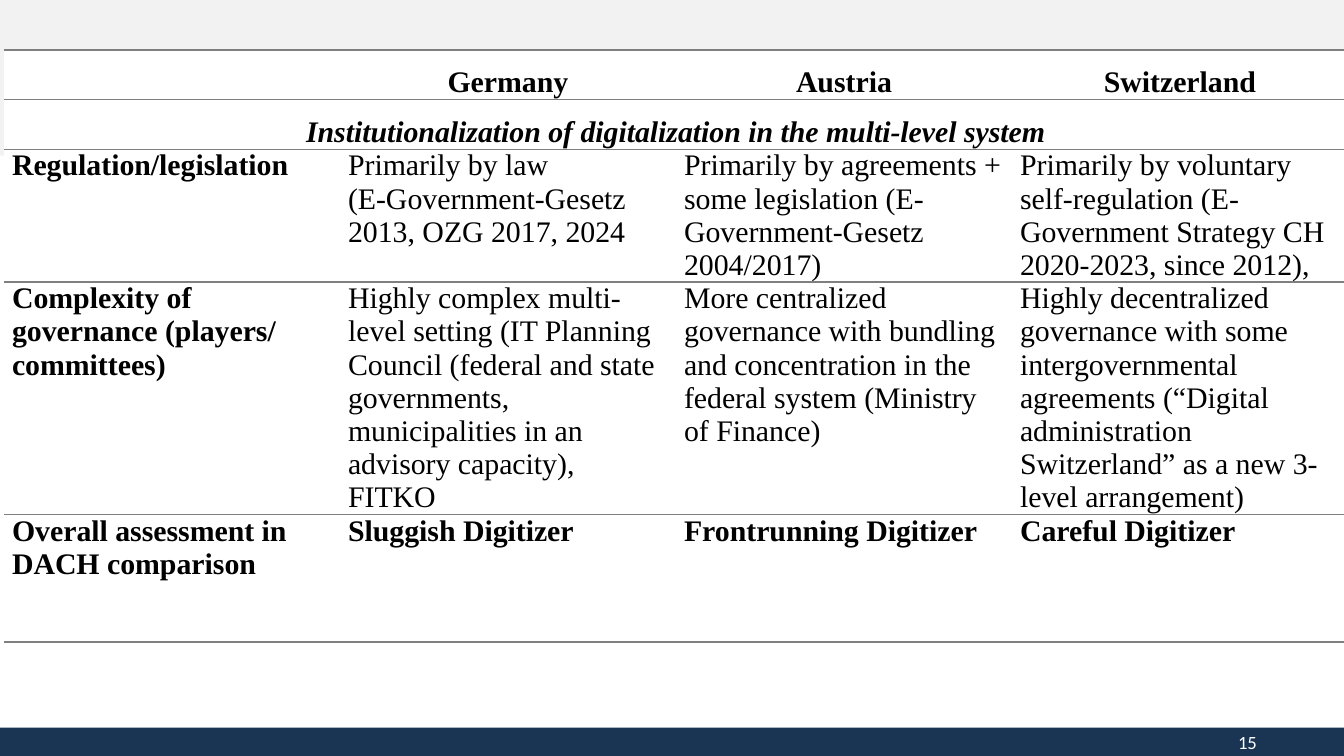
from lxml.etree import SubElement
from pptx import Presentation
from pptx.dml.color import RGBColor
from pptx.enum.shapes import MSO_SHAPE
from pptx.enum.text import MSO_ANCHOR, PP_ALIGN
from pptx.oxml import parse_xml
from pptx.oxml.ns import nsdecls, qn
from pptx.util import Inches, Pt

COLORS = {"band": "F2F2F2", "footer": "193553", "rule": "7F7F7F",
          "text": "000000", "white": "FFFFFF"}
ROWS = [
    ["", "Germany", "Austria", "Switzerland"],
    ["Institutionalization of digitalization in the multi-level system"],
    ["Regulation/legislation",
     "Primarily by law\n(E-Government-Gesetz 2013, OZG 2017, 2024",
     "Primarily by agreements + some legislation (E-Government-Gesetz 2004/2017)",
     "Primarily by voluntary self-regulation (E-Government Strategy CH 2020-2023, since 2012),"],
    ["Complexity of governance (players/ committees)",
     "Highly complex multi-level setting (IT Planning Council (federal and state governments, "
     "municipalities in an advisory capacity), FITKO",
     "More centralized governance with bundling and concentration in the federal system "
     "(Ministry of Finance)",
     "Highly decentralized governance with some intergovernmental agreements (“Digital "
     "administration Switzerland” as a new 3-level arrangement)"],
    ["Overall assessment in DACH comparison", "Sluggish Digitizer",
     "Frontrunning Digitizer", "Careful Digitizer"],
]
ROW_HEIGHTS = [0.29, 0.29, 0.95, 1.28, 0.95]


def add_run(paragraph, text, font_name, size, color):
    run = paragraph.add_run()
    run.text = text
    run.font.name = font_name
    run.font.size = Pt(size)
    run.font.color.rgb = RGBColor.from_string(COLORS[color])
    return run


def set_borders(cell):
    properties = cell._tc.get_or_add_tcPr()
    for index, side in enumerate(["lnL", "lnR", "lnT", "lnB"]):
        line = parse_xml(f'<a:{side} {nsdecls("a")} w="12700"/>')
        if side in ("lnT", "lnB"):
            fill = SubElement(line, qn("a:solidFill"))
            SubElement(fill, qn("a:srgbClr")).set("val", COLORS["rule"])
        else:
            SubElement(line, qn("a:noFill"))
        properties.insert(index, line)


presentation = Presentation()
presentation.slide_width = Inches(10)
presentation.slide_height = Inches(5.625)
width, height = presentation.slide_width, presentation.slide_height
slide = presentation.slides.add_slide(presentation.slide_layouts[6])

footer_top = int(height * 0.9625)
footer_height = height - footer_top
for top, band_height, color in [(0, int(height * 0.206), "band"),
                                (footer_top, footer_height, "footer")]:
    shape = slide.shapes.add_shape(MSO_SHAPE.RECTANGLE, 0, top, width, band_height)
    shape.shadow.inherit = False
    shape.fill.solid()
    shape.fill.fore_color.rgb = RGBColor.from_string(COLORS[color])
    shape.line.fill.background()

column_width = width // 4
table = slide.shapes.add_table(len(ROWS), 4, Inches(0.03), Inches(0.37),
                               4 * column_width, Inches(sum(ROW_HEIGHTS))).table
table.first_row = False
table.horz_banding = False
for column in table.columns:
    column.width = column_width
for row, row_height in zip(table.rows, ROW_HEIGHTS):
    row.height = Inches(row_height)
    for cell in row.cells:
        cell.margin_left = cell.margin_right = Inches(0.06)
        cell.margin_top = cell.margin_bottom = 0
        cell.fill.solid()
        cell.fill.fore_color.rgb = RGBColor.from_string(COLORS["white"])
        set_borders(cell)
table.cell(1, 0).merge(table.cell(1, 3))

for row_index, texts in enumerate(ROWS):
    for column_index, text in enumerate(texts):
        frame = table.cell(row_index, column_index).text_frame
        for line_index, line_text in enumerate(text.splitlines()):
            paragraph = frame.add_paragraph() if line_index else frame.paragraphs[0]
            if row_index < 2:
                paragraph.alignment = PP_ALIGN.CENTER
                paragraph.line_spacing = 1.5
            run = add_run(paragraph, line_text, "Times New Roman", 16, "text")
            run.font.bold = row_index in (0, 1, 4) or column_index == 0
            run.font.italic = row_index == 1

number_box = slide.shapes.add_textbox(int(width * 0.706), footer_top,
                                      int(width * 0.239), footer_height)
number_frame = number_box.text_frame
number_frame.word_wrap = True
number_frame.vertical_anchor = MSO_ANCHOR.MIDDLE
number_paragraph = number_frame.paragraphs[0]
number_paragraph.alignment = PP_ALIGN.RIGHT
add_run(number_paragraph, "15", "Calibri", 10, "white")

presentation.save("out.pptx")
